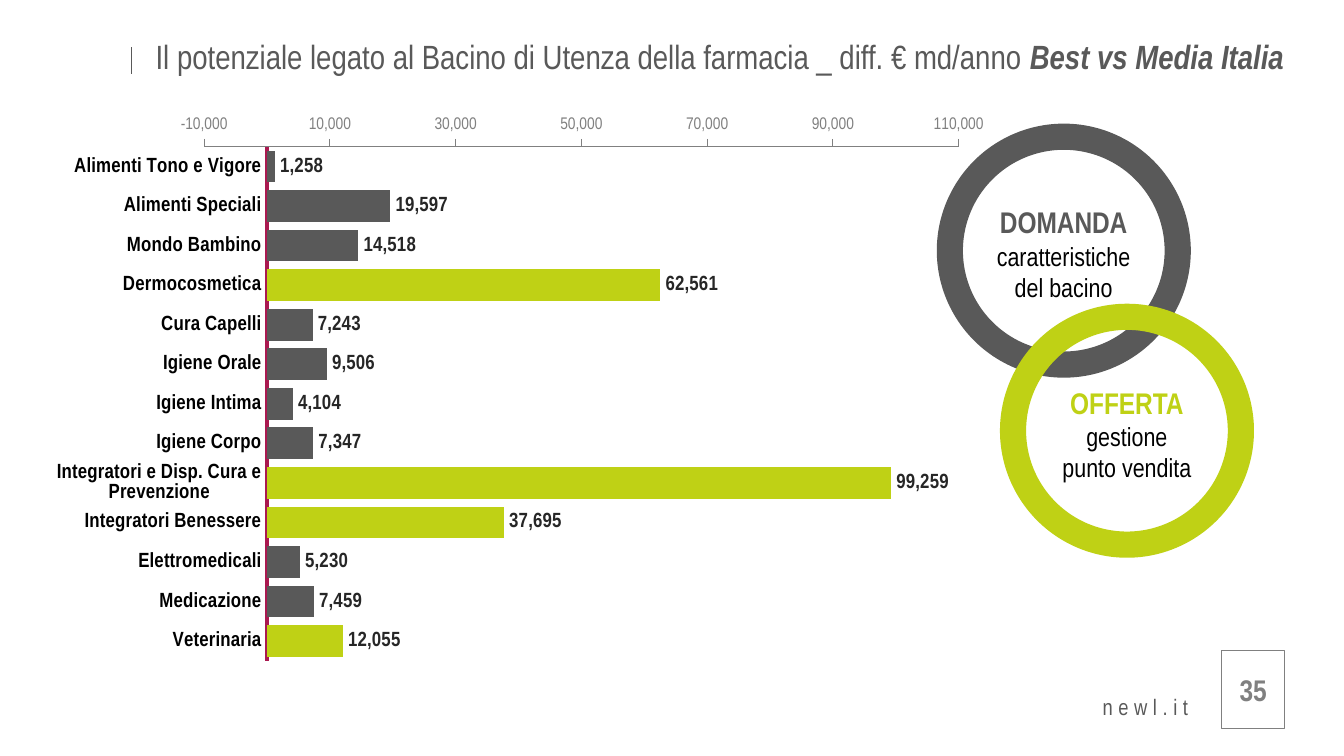
from lxml import etree
from pptx import Presentation
from pptx.chart.data import CategoryChartData
from pptx.dml.color import RGBColor
from pptx.enum.chart import XL_CHART_TYPE, XL_LABEL_POSITION, XL_TICK_LABEL_POSITION, XL_TICK_MARK
from pptx.enum.shapes import MSO_CONNECTOR, MSO_SHAPE
from pptx.enum.text import MSO_ANCHOR, PP_ALIGN
from pptx.oxml import parse_xml
from pptx.oxml.ns import nsdecls, qn
from pptx.util import Inches, Pt

BAR_CLUSTERED = XL_CHART_TYPE.BAR_CLUSTERED
OUTSIDE_END = XL_LABEL_POSITION.OUTSIDE_END
NEXT_TO_AXIS = XL_TICK_LABEL_POSITION.NEXT_TO_AXIS
TICK_NONE, TICK_OUT = XL_TICK_MARK.NONE, XL_TICK_MARK.OUTSIDE
STRAIGHT = MSO_CONNECTOR.STRAIGHT
RECTANGLE, DONUT = MSO_SHAPE.RECTANGLE, MSO_SHAPE.DONUT
MIDDLE, TOP = MSO_ANCHOR.MIDDLE, MSO_ANCHOR.TOP
LEFT, CENTER, RIGHT = PP_ALIGN.LEFT, PP_ALIGN.CENTER, PP_ALIGN.RIGHT

FONT = "Arial Narrow"
DARK = RGBColor(0x59, 0x59, 0x59)
GREY = RGBColor(0x80, 0x80, 0x80)
LIME = RGBColor(0xBF, 0xD1, 0x15)
WINE = RGBColor(0xAA, 0x19, 0x50)
INK = RGBColor(0x26, 0x26, 0x26)
BLACK = RGBColor(0, 0, 0)
WHITE = RGBColor(255, 255, 255)

TITLE = "Il potenziale legato al Bacino di Utenza della farmacia _ diff. € md/anno "
TITLE_ACCENT = "Best vs Media Italia"
SITE = "newl.it"
PAGE_NUMBER = "35"
CATEGORIES = [
    ("Alimenti Tono e Vigore", 1258, DARK),
    ("Alimenti Speciali", 19597, DARK),
    ("Mondo Bambino", 14518, DARK),
    ("Dermocosmetica", 62561, LIME),
    ("Cura Capelli", 7243, DARK),
    ("Igiene Orale", 9506, DARK),
    ("Igiene Intima", 4104, DARK),
    ("Igiene Corpo", 7347, DARK),
    ("Integratori e Disp. Cura e Prevenzione", 99259, LIME),
    ("Integratori Benessere", 37695, LIME),
    ("Elettromedicali", 5230, DARK),
    ("Medicazione", 7459, DARK),
    ("Veterinaria", 12055, LIME),
]
RINGS = [
    (6.97, 0.92, DARK, "DOMANDA", ["caratteristiche del bacino"]),
    (7.44, 2.26, LIME, "OFFERTA", ["gestione", "punto vendita"]),
]
RING_SIZE = 1.89
RING_TEXT_WIDTH = 1.26
PLOT = {"x": 0.202, "y": 0.062, "w": 0.767, "h": 0.935}


def style(font, size, color, bold=False):
    font.name = FONT
    font.size = Pt(size)
    font.bold = bold
    font.color.rgb = color


def add_text(page, left, top, width, height, lines, align=LEFT, anchor=TOP):
    box = page.shapes.add_textbox(Inches(left), Inches(top), Inches(width), Inches(height))
    frame = box.text_frame
    frame.word_wrap = True
    frame.vertical_anchor = anchor
    for index, (text, size, color, bold) in enumerate(lines):
        para = frame.paragraphs[0] if index == 0 else frame.add_paragraph()
        para.alignment = align
        para.add_run().text = text
        style(para.font, size, color, bold)
    return frame.paragraphs[0]


def add_header(page):
    rule = page.shapes.add_connector(STRAIGHT, Inches(0.98), Inches(0.35), Inches(0.98), Inches(0.55))
    rule.line.color.rgb = DARK
    rule.line.width = Pt(0.5)
    etree.SubElement(rule._element.spPr, qn("a:effectLst"))
    para = add_text(page, 1.06, 0.21, 8.94, 0.41, [(TITLE, 18, DARK, False)], anchor=MIDDLE)
    accent = para.add_run()
    accent.text = TITLE_ACCENT
    accent.font.bold = True
    accent.font.italic = True


def add_footer(page):
    para = add_text(page, 3.11, 5.11, 5.83, 0.3, [(SITE, 12, DARK, False)], RIGHT)
    para.runs[0].font._element.set("spc", "300")
    badge = page.shapes.add_shape(RECTANGLE, Inches(9.09), Inches(4.84), Inches(0.47), Inches(0.58))
    badge.shadow.inherit = False
    badge.fill.solid()
    badge.fill.fore_color.rgb = WHITE
    badge.line.color.rgb = GREY
    badge.line.width = Pt(0.5)
    frame = badge.text_frame
    frame.margin_left = frame.margin_right = 0
    frame.vertical_anchor = MIDDLE
    para = frame.paragraphs[0]
    para.text = PAGE_NUMBER
    para.alignment = CENTER
    style(para.font, 16, GREY, True)


def add_bars(page):
    data = CategoryChartData()
    data.categories = [name for name, _, _ in CATEGORIES]
    data.add_series("Series 1", [value for _, value, _ in CATEGORIES])
    chart = page.shapes.add_chart(
        BAR_CLUSTERED, Inches(0.04), Inches(0.84), Inches(7.32), Inches(4.09), data
    ).chart
    chart.has_legend = False
    chart.has_title = False
    style(chart.font, 9, BLACK)

    axis = chart.category_axis
    axis.reverse_order = True
    axis.major_tick_mark = axis.minor_tick_mark = TICK_NONE
    axis.tick_label_position = NEXT_TO_AXIS
    axis.format.line.color.rgb = WINE
    axis.format.line.width = Pt(2)
    style(axis.tick_labels.font, 11, BLACK, True)

    axis = chart.value_axis
    axis.minimum_scale, axis.maximum_scale, axis.major_unit = -10000, 110000, 20000
    axis.has_major_gridlines = False
    axis.major_tick_mark, axis.minor_tick_mark = TICK_OUT, TICK_NONE
    axis.format.line.color.rgb = GREY
    axis.format.line.width = Pt(0.5)
    axis.tick_labels.number_format = "#,##0"
    axis.tick_labels.number_format_is_linked = False
    style(axis.tick_labels.font, 9, GREY)

    plot = chart.plots[0]
    plot.gap_width = 25
    plot.vary_by_categories = False
    series = plot.series[0]
    series.invert_if_negative = False
    series.format.fill.solid()
    series.format.fill.fore_color.rgb = DARK
    for index, (_, _, color) in enumerate(CATEGORIES):
        if color != DARK:
            fill = series.points[index].format.fill
            fill.solid()
            fill.fore_color.rgb = color
    labels = series.data_labels
    labels.show_value = True
    labels.position = OUTSIDE_END
    labels.number_format = "#,###"
    labels.number_format_is_linked = False
    style(labels.font, 11, INK, True)

    area = chart._chartSpace.chart.plotArea
    for old in area.findall(qn("c:layout")):
        area.remove(old)
    modes = '<c:xMode val="edge"/><c:yMode val="edge"/>'
    sizes = "".join(f'<c:{key} val="{value}"/>' for key, value in PLOT.items())
    area.insert(0, parse_xml(
        f'<c:layout {nsdecls("c")}><c:manualLayout><c:layoutTarget val="inner"/>'
        f"{modes}{sizes}</c:manualLayout></c:layout>"
    ))


def add_ring(page, left, top, color, heading, details):
    ring = page.shapes.add_shape(
        DONUT, Inches(left), Inches(top), Inches(RING_SIZE), Inches(RING_SIZE)
    )
    ring.shadow.inherit = False
    ring.adjustments[0] = 0.103
    ring.fill.solid()
    ring.fill.fore_color.rgb = color
    ring.line.fill.background()
    lines = [(heading, 16, color, True)] + [(text, 14, BLACK, False) for text in details]
    text_left = left + (RING_SIZE - RING_TEXT_WIDTH) / 2
    add_text(page, text_left, top + 0.55, RING_TEXT_WIDTH, 0.84, lines, CENTER)


def main():
    deck = Presentation()
    deck.slide_width = Inches(10)
    deck.slide_height = deck.slide_width * 9 // 16
    page = deck.slides.add_slide(deck.slide_layouts[6])
    add_header(page)
    add_footer(page)
    add_bars(page)
    for ring in RINGS:
        add_ring(page, *ring)
    deck.save("out.pptx")


if __name__ == "__main__":
    main()
